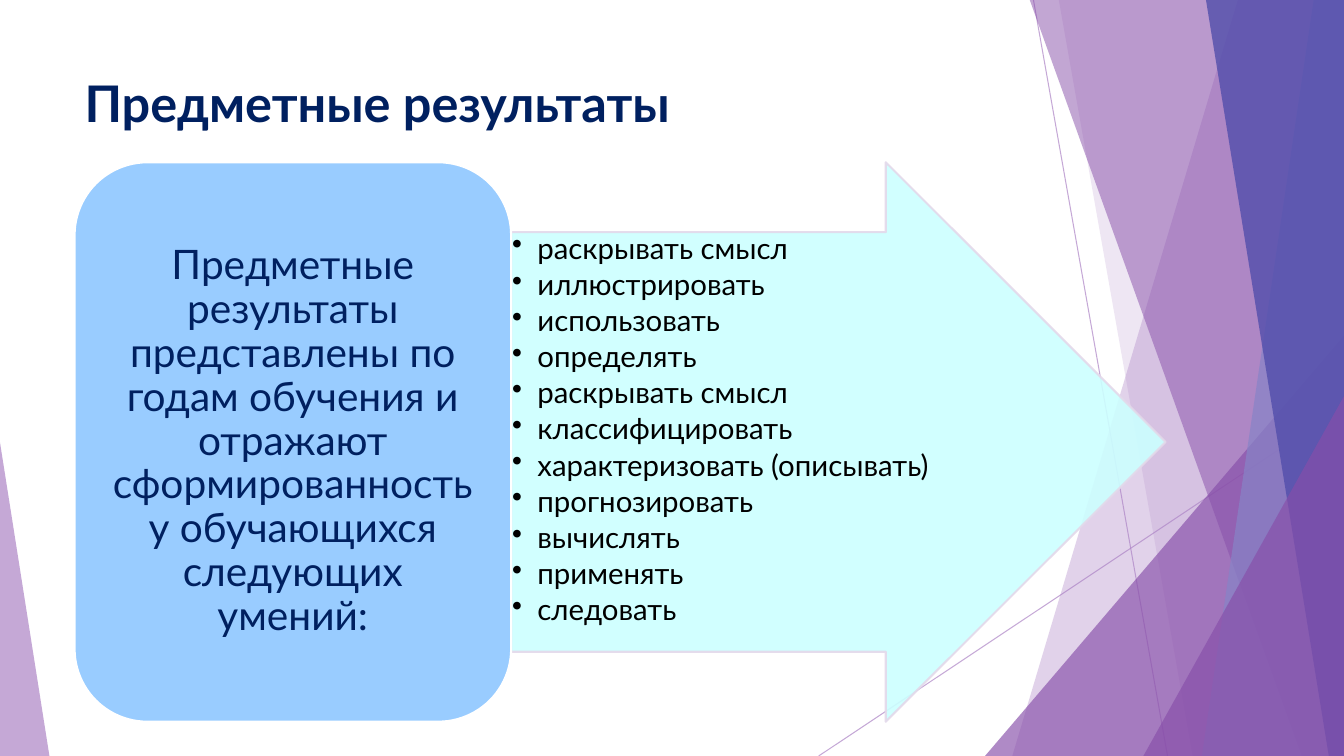
from dataclasses import dataclass

from lxml.etree import SubElement
from pptx import Presentation
from pptx.dml.color import RGBColor
from pptx.enum.shapes import MSO_CONNECTOR, MSO_SHAPE
from pptx.enum.text import MSO_ANCHOR, PP_ALIGN
from pptx.oxml.ns import qn
from pptx.util import Inches, Pt

WIDE, HIGH = 13.33, 7.5
TOP = -0.01
FONT = "Lato"
NAVY, LILAC, PLUM = "002060", "AD84C6", "874EA9"


@dataclass
class Ray:
    start: tuple[float, float]
    end: tuple[float, float]


@dataclass
class Band:
    """Strip along the right edge, from x = high at the top to x = low."""
    high: float
    low: float
    color: str
    alpha: int


@dataclass
class Wedge:
    left: float
    top: float
    width: float
    peak: int
    color: str
    alpha: int


RAYS = [Ray((10.25, 0), (11.58, HIGH)), Ray((WIDE, 4.03), (8.12, HIGH))]
DECOR = [
    Band(12.28, 10.04, LILAC, 36),
    Band(10.5, 11.83, LILAC, 20),
    Wedge(9.77, 3.33, 3.56, 1, PLUM, 66),
    Band(10.21, 12.91, PLUM, 50),
    Band(13.03, 11.92, "8784C7", 70),
    Band(11.96, 13.18, "524EAB", 80),
    Wedge(11.34, 3.93, 1.99, 1, PLUM, 66),
    Wedge(0, 4.39, 0.49, 0, LILAC, 70),
]
SKILLS = [
    "раскрывать смысл",
    "иллюстрировать",
    "использовать",
    "определять",
    "раскрывать смысл",
    "классифицировать",
    "характеризовать (описывать)",
    "прогнозировать",
    "вычислять",
    "применять",
    "следовать",
]
LEAD = (
    "Предметные результаты представлены по годам обучения и отражают "
    "сформированность у обучающихся следующих умений:"
)


def paint(fmt, color: str, alpha: int = 100) -> None:
    """Give a fill, or the fill of a line, one colour."""
    fmt.solid()
    fmt.fore_color.rgb = RGBColor.from_string(color)
    if alpha < 100:
        tint = fmt._xPr.find(qn("a:solidFill"))[0]
        SubElement(tint, qn("a:alpha"), val=str(alpha * 1000))


def style(shape, color: str, alpha: int = 100, edge: str = "") -> None:
    shape.shadow.inherit = False
    paint(shape.fill, color, alpha)
    if edge:
        shape.line.width = Pt(1.5)
        paint(shape.line.fill, edge, alpha)
    else:
        shape.line.fill.background()


def add_ray(shapes, ray: Ray) -> None:
    ends = [Inches(v) for v in ray.start + ray.end]
    line = shapes.add_connector(MSO_CONNECTOR.STRAIGHT, *ends)
    line.line.width = Pt(0.75)
    paint(line.line.fill, LILAC, 70)
    SubElement(line._element.spPr, qn("a:effectLst"))


def add_band(shapes, band: Band) -> None:
    spots = [(band.high, TOP), (WIDE, TOP), (WIDE, HIGH), (band.low, HIGH)]
    first, *rest = [(Inches(x), Inches(y)) for x, y in spots]
    pen = shapes.build_freeform(*first)
    pen.add_line_segments(rest)
    style(pen.convert_to_shape(), band.color, band.alpha)


def add_preset(shapes, kind: MSO_SHAPE, box: tuple, *knobs: float):
    shape = shapes.add_shape(kind, *map(Inches, box))
    for place, knob in enumerate(knobs):
        shape.adjustments[place] = knob
    return shape


def add_wedge(shapes, wedge: Wedge) -> None:
    box = (wedge.left, wedge.top, wedge.width, HIGH - wedge.top)
    shape = add_preset(shapes, MSO_SHAPE.ISOSCELES_TRIANGLE, box, wedge.peak)
    style(shape, wedge.color, wedge.alpha)


def add_text(shapes, lines: list[str], box: tuple, *, size: float, color: str,
             bold: bool = False, align=PP_ALIGN.LEFT, anchor=MSO_ANCHOR.TOP,
             inset: tuple = (0.1, 0.05), pitch: float = 1, after: float = 0,
             bullet: bool = False) -> None:
    frame = shapes.add_textbox(*map(Inches, box)).text_frame
    frame.word_wrap = True
    frame.vertical_anchor = anchor
    frame.margin_left = frame.margin_right = Inches(inset[0])
    frame.margin_top = frame.margin_bottom = Inches(inset[1])
    frame.text = "\n".join(lines)
    for para in frame.paragraphs:
        para.alignment = align
        para.line_spacing = pitch
        para.space_after = Pt(after)
        if bullet:
            props = para._p.get_or_add_pPr()
            props.set("marL", str(Inches(0.25)))
            props.set("indent", str(Inches(-0.25)))
            SubElement(props, qn("a:buChar"), char="•")
        font = para.runs[0].font
        font.name, font.size, font.bold = FONT, Pt(size), bold
        font.color.rgb = RGBColor.from_string(color)


def main() -> None:
    deck = Presentation()
    deck.slide_width, deck.slide_height = Inches(WIDE), Inches(HIGH)
    shapes = deck.slides.add_slide(deck.slide_layouts[6]).shapes

    for ray in RAYS:
        add_ray(shapes, ray)
    for part in DECOR:
        if isinstance(part, Band):
            add_band(shapes, part)
        else:
            add_wedge(shapes, part)

    add_text(shapes, ["Предметные результаты"], (0.74, 0.67, 9.4, 0.95),
             size=36, color=NAVY, bold=True)

    arrow = add_preset(shapes, MSO_SHAPE.RIGHT_ARROW,
                       (5.07, 1.61, 6.49, 5.55), 0.75, 0.5)
    style(arrow, "CCFFFF", 90, edge="E3D9EA")
    add_text(shapes, SKILLS, (5.07, 2.31, 4.41, 4.16), size=21,
             color="000000", inset=(0.01, 0.01), pitch=0.9, after=3.15,
             bullet=True)

    card = add_preset(shapes, MSO_SHAPE.ROUNDED_RECTANGLE,
                      (0.74, 1.61, 4.33, 5.55))
    style(card, "99CCFF", edge="FFFFFF")
    add_text(shapes, [LEAD], (0.95, 1.82, 3.91, 5.13), size=29, color=NAVY,
             align=PP_ALIGN.CENTER, anchor=MSO_ANCHOR.MIDDLE,
             inset=(0.12, 0.06), pitch=0.9)

    deck.save("out.pptx")


if __name__ == "__main__":
    main()
